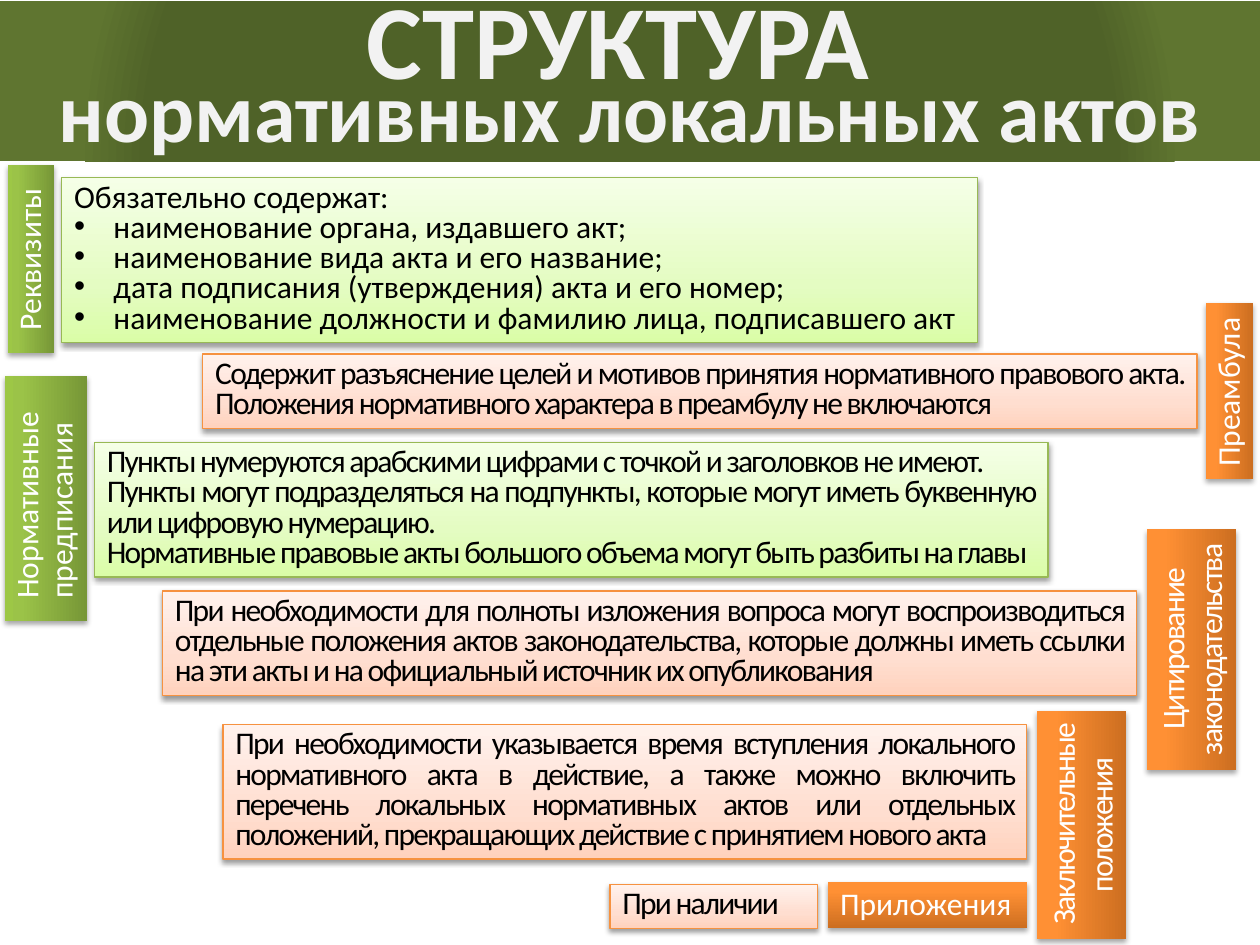
import pptx
import pptx.dml.color
import pptx.enum.shapes
import pptx.enum.text
import pptx.oxml
import pptx.oxml.ns
import pptx.util

Pt = pptx.util.Pt
ALIGN = pptx.enum.text.PP_ALIGN
ANCHOR = pptx.enum.text.MSO_ANCHOR
NS = pptx.oxml.ns.nsdecls("a")


def rgb(value):
    return pptx.dml.color.RGBColor.from_string(value)


class Deck:
    font = "Calibri"
    size = 18
    box_fills = {
        "green": [(0, "DAFDA7"), (35, "E4FCC2"), (100, "F5FFE7")],
        "orange": [(0, "FFD2BD"), (35, "FFDED0"), (100, "FFF2ED")],
    }
    box_lines = {"green": "98B955", "orange": "F69240"}
    tab_fills = {
        "green": [(0, "779737"), (80, "9BC348"), (100, "9DC746")],
        "orange": [(0, "CC6E20"), (80, "FF9034"), (100, "FF9136")],
    }
    upward = '<a:lin %s ang="16200000" scaled="0"/>' % NS
    radial = ('<a:path %s path="circle"><a:fillToRect l="50000" t="130000" '
              'r="50000" b="-30000"/></a:path>' % NS)

    def __init__(self):
        self.prs = pptx.Presentation()
        self.prs.slide_width, self.prs.slide_height = Pt(720), Pt(540)
        self.s = self.prs.slides.add_slide(self.prs.slide_layouts[6])

    def gradient(self, sp, stops, direction):
        sp.fill.gradient()
        grad = sp._element.spPr.find(pptx.oxml.ns.qn("a:gradFill"))
        for child in list(grad):
            grad.remove(child)
        grad.set("rotWithShape", "1")
        gs = "".join('<a:gs pos="%d"><a:srgbClr val="%s"/></a:gs>' % (pos * 1000, color)
                     for pos, color in stops)
        grad.append(pptx.oxml.parse_xml("<a:gsLst %s>%s</a:gsLst>" % (NS, gs)))
        grad.append(pptx.oxml.parse_xml(direction))

    def shadow(self, sp, alpha, dist):
        effects = sp._element.spPr.find(pptx.oxml.ns.qn("a:effectLst"))
        effects.append(pptx.oxml.parse_xml(
            '<a:outerShdw %s blurRad="%d" dist="%d" dir="5400000" rotWithShape="0">'
            '<a:srgbClr val="000000"><a:alpha val="%d"/></a:srgbClr></a:outerShdw>'
            % (NS, Pt(3.1), Pt(dist), alpha * 1000)))

    def rect(self, at, stops, direction, line=None):
        sp = self.s.shapes.add_shape(pptx.enum.shapes.MSO_SHAPE.RECTANGLE, *map(Pt, at))
        sp.shadow.inherit = False
        self.gradient(sp, stops, direction)
        if line:
            sp.line.color.rgb = rgb(line)
            sp.line.width = Pt(0.75)
        else:
            sp.line.fill.background()
        tf = sp.text_frame
        tf.word_wrap = True
        tf.vertical_anchor = ANCHOR.TOP
        return sp

    def paragraph(self, tf, text, color, align=ALIGN.JUSTIFY, spacing=0.8, size=None,
                  bold=False, tracking=0, left=0, bullet=False):
        p = tf.paragraphs[0]
        if p.runs:
            p = tf.add_paragraph()
        p.alignment, p.line_spacing = align, spacing
        pPr = p._p.get_or_add_pPr()
        if left:
            pPr.set("marL", str(Pt(left)))
        if bullet:
            pPr.set("indent", str(-Pt(left)))
            pPr.append(pptx.oxml.parse_xml('<a:buFont %s typeface="Arial"/>' % NS))
            pPr.append(pptx.oxml.parse_xml('<a:buChar %s char="•"/>' % NS))
        r = p.add_run()
        r.text = text
        r.font.name, r.font.size, r.font.bold = self.font, Pt(size or self.size), bold
        r.font.color.rgb = rgb(color)
        if tracking:
            r._r.get_or_add_rPr().set("spc", str(round(tracking * 100)))

    def title(self, at, lines):
        sp = self.rect(at, [(76, "4F6228"), (87, "5F7530")], self.radial)
        sp.text_frame.vertical_anchor = ANCHOR.BOTTOM
        for text, size in lines:
            self.paragraph(sp.text_frame, text, "F2F2F2", ALIGN.CENTER, 0.6, size, True)

    def box(self, at, theme, lines, bullets=(), tracking=-1):
        sp = self.rect(at, self.box_fills[theme], self.upward, self.box_lines[theme])
        self.shadow(sp, 38, 1.6)
        tf = sp.text_frame
        tf.auto_size = pptx.enum.text.MSO_AUTO_SIZE.SHAPE_TO_FIT_TEXT
        for text in lines:
            self.paragraph(tf, text, "000000", tracking=tracking)
        for text in bullets:
            self.paragraph(tf, text, "000000", tracking=tracking, left=22.5, bullet=True)

    def tab(self, at, theme, text, rotation=270, wrap=True, **style):
        """Dark section label, turned to read upwards by default."""
        sp = self.rect(at, self.tab_fills[theme], self.upward)
        sp.rotation = rotation
        self.shadow(sp, 35, 1.8)
        tf = sp.text_frame
        tf.word_wrap = wrap
        tf.auto_size = pptx.enum.text.MSO_AUTO_SIZE.SHAPE_TO_FIT_TEXT
        self.paragraph(tf, text, "FFFFFF", **{"spacing": 0.9, **style})


def main():
    d = Deck()
    centred = {"align": ALIGN.CENTER, "spacing": 1.0}

    d.title((0, 0.7, 720, 91.4),
            [("СТРУКТУРА ", 60), ("нормативных локальных актов", 48)])

    d.box((35.3, 101.5, 523.4, 94.3), "green", ["Обязательно содержат:"],
          ["наименование органа, издавшего акт;",
           "наименование вида акта и его название;",
           "дата подписания (утверждения) акта и его номер;",
           "наименование должности и фамилию лица, подписавшего акт"], tracking=0)
    d.tab((-36, 134.6, 107.3, 26.6), "green", "Реквизиты", left=5.8)

    d.tab((-43.9, 261.4, 140.4, 46.8), "green", "Нормативные предписания", left=5.8)
    d.box((54, 252.7, 545, 77), "green",
          ["Пункты нумеруются арабскими цифрами с точкой и заголовков не имеют.",
           "Пункты могут подразделяться на подпункты, которые могут иметь "
           "буквенную или цифровую нумерацию.",
           "Нормативные правовые акты большого объема могут быть разбиты на главы"])

    d.tab((652.3, 210.2, 100.8, 26.6), "orange", "Преамбула", wrap=False)
    d.box((115.9, 202.3, 568.1, 42.5), "orange",
          ["Содержит разъяснение целей и мотивов принятия нормативного правового акта. "
           "Положения нормативного характера в преамбулу не включаются"])

    d.tab((612, 345.6, 137.5, 51.1), "orange", "Цитирование законодательства",
          tracking=-1, **centred)
    d.box((92.9, 337.7, 556.6, 59.8), "orange",
          ["При необходимости для полноты изложения вопроса могут воспроизводиться "
           "отдельные положения актов законодательства, которые должны иметь ссылки "
           "на эти акты и на официальный источник их опубликования"])

    d.box((127.4, 414, 459.4, 77), "orange",
          ["При необходимости указывается время вступления локального нормативного "
           "акта в действие, а также можно включить перечень локальных нормативных "
           "актов или отдельных положений, прекращающих действие с принятием нового акта"])
    d.tab((473, 504, 113.8, 26.6), "orange", "Приложения", rotation=0, wrap=False)
    d.box((348.5, 505.4, 118.8, 25.2), "orange", ["При наличии"])
    d.tab((553, 445.7, 130.3, 51.1), "orange", "Заключительные положения",
          tracking=-1.1, **centred)

    d.prs.save("out.pptx")


if __name__ == "__main__":
    main()
